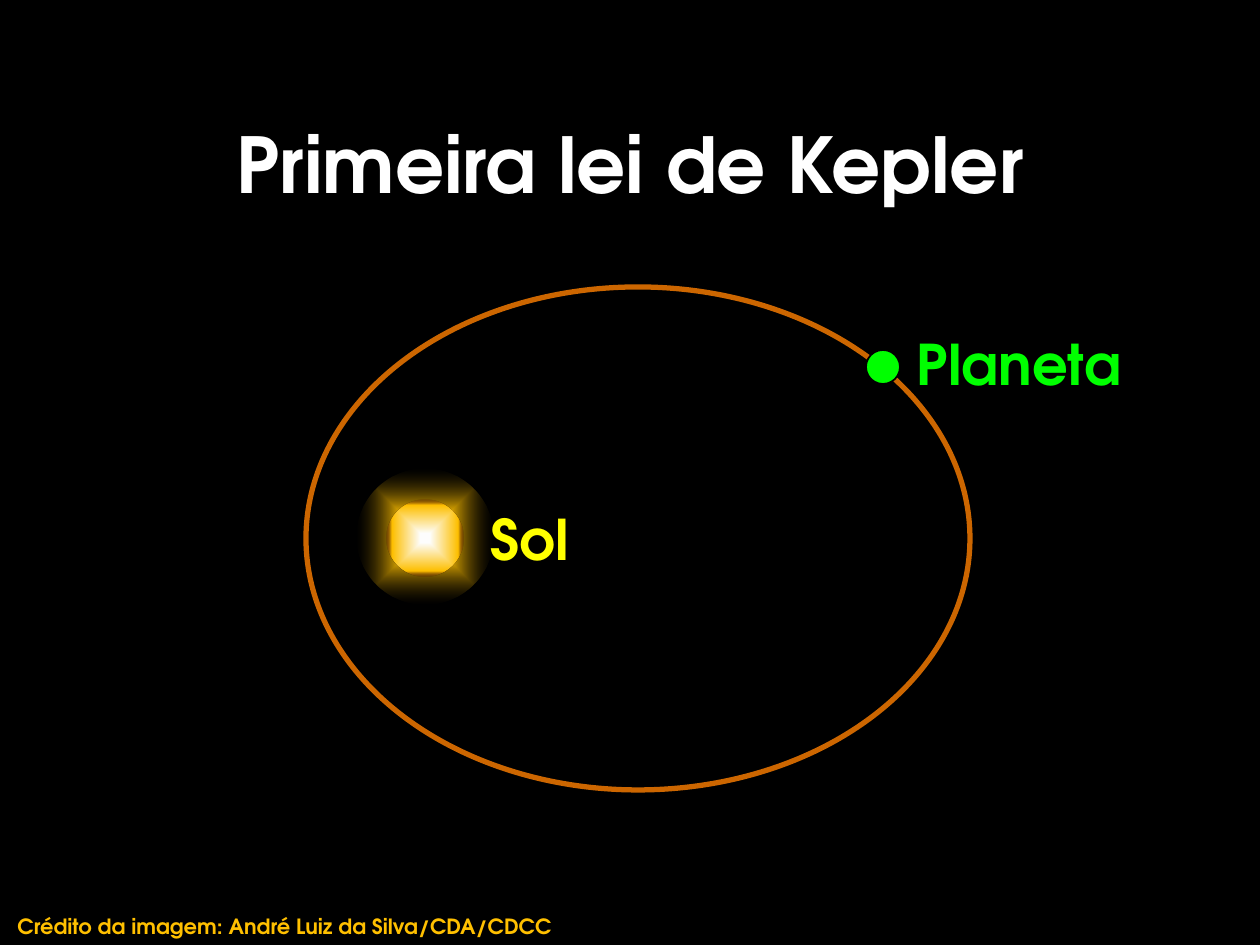
from lxml import etree
from pptx import Presentation
from pptx.dml.color import RGBColor
from pptx.enum.shapes import MSO_SHAPE as Shape
from pptx.enum.text import MSO_ANCHOR as Anchor, PP_ALIGN as Align
from pptx.oxml.ns import qn
from pptx.util import Emu, Pt

PX = 914400 // 126
FONT = "TeX Gyre Adventor"
COLORS = {
    "space": "000000", "white": "FFFFFF", "gold": "FFC000", "ember": "4D0808",
    "orbit": "CC6600", "planet": "00FF00", "sun": "FFFF00",
}

SUN_LAYERS = [
    ((357, 469, 136, 135), [(7, "white", 100), (32, "gold", 100), (100, "space", 23)]),
    ((387, 500, 77, 77), [(12, "white", 100), (85, "gold", 100), (100, "ember", 17)]),
]
ORBIT = (306, 287, 664, 503)
PLANET = (866, 350, 34, 34)
LABELS = [
    ("Primeira lei de Kepler", (95, 84, 1071, 158), 44, "white", Align.CENTER, Anchor.MIDDLE, True),
    ("Planeta", (903, 323, 232, 81), 32, "planet", Align.CENTER, Anchor.TOP, False),
    ("Sol", (460, 498, 140, 81), 32, "sun", Align.CENTER, Anchor.TOP, True),
    ("Crédito da imagem: André Luiz da Silva/CDA/CDCC", (5, 907, 665, 38), 12, "gold",
     Align.LEFT, Anchor.TOP, True),
]


def rgb(name):
    return RGBColor.from_string(COLORS[name])


def place(box):
    return [Emu(length * PX) for length in box]


def add_ellipse(page, box, fill=None, line=None, width=1):
    ellipse = page.shapes.add_shape(Shape.OVAL, *place(box))
    ellipse.shadow.inherit = False
    if fill:
        ellipse.fill.solid()
        ellipse.fill.fore_color.rgb = rgb(fill)
    else:
        ellipse.fill.background()
    if line:
        ellipse.line.color.rgb = rgb(line)
        ellipse.line.width = Pt(width)
    else:
        ellipse.line.fill.background()
    return ellipse


def add_glow(ellipse, stops):
    glow = etree.Element(qn("a:gradFill"), rotWithShape="1")
    stop_list = etree.SubElement(glow, qn("a:gsLst"))
    for position, name, opacity in stops:
        stop = etree.SubElement(stop_list, qn("a:gs"), pos=str(position * 1000))
        color = etree.SubElement(stop, qn("a:srgbClr"), val=COLORS[name])
        if opacity < 100:
            etree.SubElement(color, qn("a:alpha"), val=str(opacity * 1000))
    center = etree.SubElement(glow, qn("a:path"), path="shape")
    etree.SubElement(center, qn("a:fillToRect"), {side: "50000" for side in "ltrb"})
    properties = ellipse.element.spPr
    properties.replace(properties.find(qn("a:noFill")), glow)


def add_label(page, text, box, size, color, align, anchor, wrap):
    frame = page.shapes.add_textbox(*place(box)).text_frame
    frame.word_wrap = wrap
    frame.vertical_anchor = anchor
    frame.text = text
    para = frame.paragraphs[0]
    para.alignment = align
    font = para.runs[0].font
    font.name = FONT
    font.size = Pt(size)
    font.bold = True
    font.color.rgb = rgb(color)


def main():
    deck = Presentation()
    deck.slide_width, deck.slide_height = place((1260, 945))
    page = deck.slides.add_slide(deck.slide_layouts[6])
    page.background.fill.solid()
    page.background.fill.fore_color.rgb = rgb("space")
    for box, stops in SUN_LAYERS:
        add_glow(add_ellipse(page, box), stops)
    add_ellipse(page, ORBIT, line="orbit", width=3)
    add_ellipse(page, PLANET, fill="planet", line="space")
    for label in LABELS:
        add_label(page, *label)
    deck.save("out.pptx")


if __name__ == "__main__":
    main()
